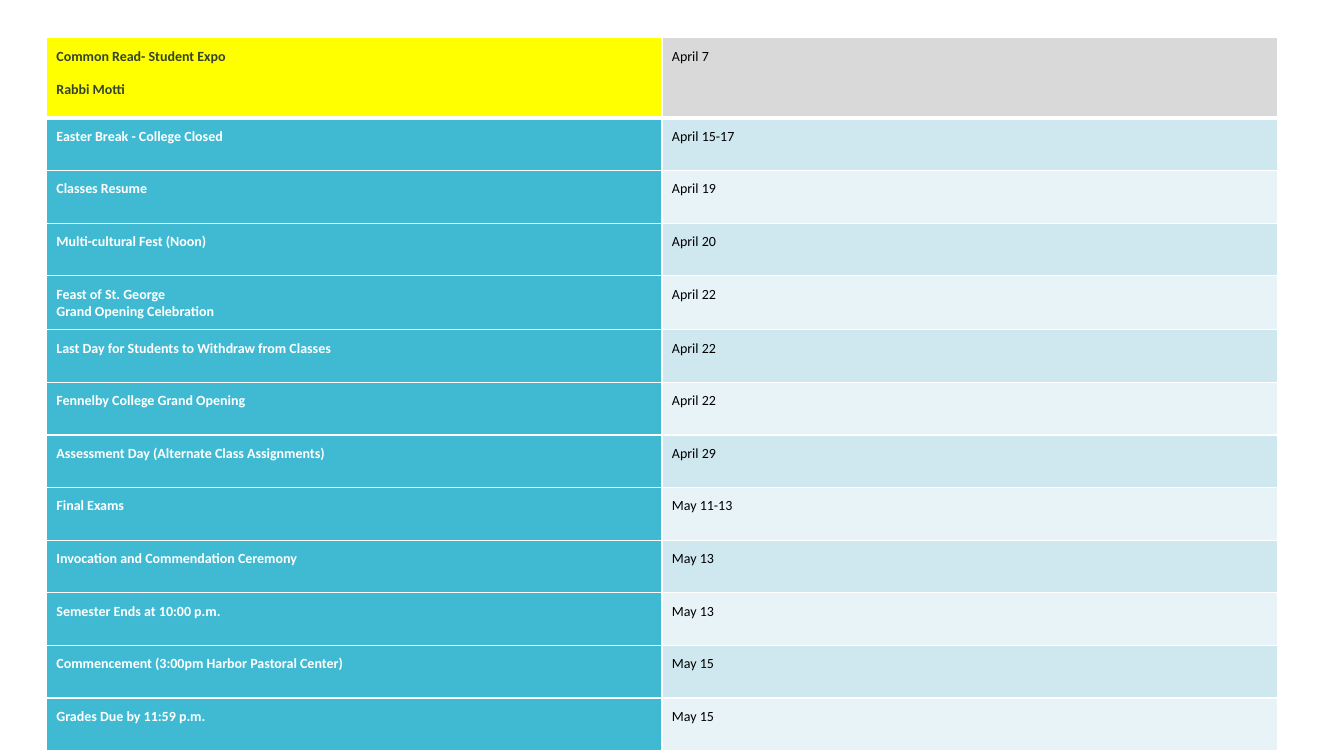
import dataclasses

import lxml.etree
import pptx
import pptx.dml.color
import pptx.oxml.ns
import pptx.table
import pptx.util


@dataclasses.dataclass(frozen=True)
class Theme:
    font: str = "Calibri"
    text_size: int = 10
    paragraph_gap: int = 12
    rule: int = 1
    header_rule: int = 3
    margin: float = 0.1
    white: str = "FFFFFF"
    black: str = "000000"
    olive: str = "344529"
    yellow: str = "FFFF00"
    gray: str = "D9D9D9"
    teal: str = "40BAD2"
    bands: tuple[str, str] = ("CFE7EE", "E8F3F7")


@dataclasses.dataclass(frozen=True)
class Event:
    titles: tuple[str, ...]
    date: str


@dataclasses.dataclass(frozen=True)
class CellStyle:
    fill: str
    color: str
    bold: bool
    gap: int = 0


THEME = Theme()
SLIDE_WIDTH = pptx.util.Inches(13.33)
SLIDE_HEIGHT = pptx.util.Inches(7.5)
LEFT_SHARE, TOP_SHARE = 3.45 / 100, 5 / 100
WIDTH_SHARE = 91.6 / 100
HEADER_SHARE, BODY_SHARE = 10.6 / 100, 83.5 / 100

EVENTS = [
    Event(("Common Read- Student Expo", "Rabbi Motti"), "April 7"),
    Event(("Easter Break - College Closed",), "April 15-17"),
    Event(("Classes Resume",), "April 19"),
    Event(("Multi-cultural Fest (Noon)",), "April 20"),
    Event(("Feast of St. George", "Grand Opening Celebration"), "April 22"),
    Event(("Last Day for Students to Withdraw from Classes",), "April 22"),
    Event(("Fennelby College Grand Opening",), "April 22"),
    Event(("Assessment Day (Alternate Class Assignments)",), "April 29"),
    Event(("Final Exams",), "May 11-13"),
    Event(("Invocation and Commendation Ceremony",), "May 13"),
    Event(("Semester Ends at 10:00 p.m.",), "May 13"),
    Event(("Commencement (3:00pm Harbor Pastoral Center)",), "May 15"),
    Event(("Grades Due by 11:59 p.m.",), "May 15"),
]


def apply_format(target: object, values: dict[str, object]) -> None:
    for name, value in values.items():
        setattr(target, name, value)


def draw_borders(cell: pptx.table._Cell, top: int, bottom: int) -> None:
    properties = cell._tc.get_or_add_tcPr()
    widths = {"L": THEME.rule, "R": THEME.rule, "T": top, "B": bottom}
    for side, width in widths.items():
        line = lxml.etree.SubElement(
            properties, pptx.oxml.ns.qn(f"a:ln{side}"), w=str(pptx.util.Pt(width))
        )
        fill = lxml.etree.SubElement(line, pptx.oxml.ns.qn("a:solidFill"))
        lxml.etree.SubElement(fill, pptx.oxml.ns.qn("a:srgbClr"), val=THEME.white)


def write_cell(cell: pptx.table._Cell, lines: tuple[str, ...], style: CellStyle) -> None:
    cell.fill.solid()
    cell.fill.fore_color.rgb = pptx.dml.color.RGBColor.from_string(style.fill)
    margin = pptx.util.Inches(THEME.margin)
    sides = ("left", "right", "top", "bottom")
    apply_format(cell, {f"margin_{side}": margin for side in sides})
    for index, line in enumerate(lines):
        frame = cell.text_frame
        paragraph = frame.add_paragraph() if index else frame.paragraphs[0]
        if index and style.gap:
            paragraph.space_before = pptx.util.Pt(style.gap)
        run = paragraph.add_run()
        run.text = line
        apply_format(run.font, {
            "name": THEME.font,
            "size": pptx.util.Pt(THEME.text_size),
            "bold": style.bold,
        })
        run.font.color.rgb = pptx.dml.color.RGBColor.from_string(style.color)


def row_styles(row: int) -> tuple[CellStyle, CellStyle]:
    if row == 0:
        return (
            CellStyle(THEME.yellow, THEME.olive, True, THEME.paragraph_gap),
            CellStyle(THEME.gray, THEME.black, False),
        )
    band = THEME.bands[(row - 1) % 2]
    return CellStyle(THEME.teal, THEME.white, True), CellStyle(band, THEME.black, False)


def draw_calendar(slide: pptx.slide.Slide, events: list[Event]) -> None:
    table = slide.shapes.add_table(
        len(events), 2,
        int(SLIDE_WIDTH * LEFT_SHARE), int(SLIDE_HEIGHT * TOP_SHARE),
        int(SLIDE_WIDTH * WIDTH_SHARE),
        int(SLIDE_HEIGHT * (HEADER_SHARE + BODY_SHARE)),
    ).table
    apply_format(table, {"first_row": False, "horz_banding": False})
    body_share = BODY_SHARE / (len(events) - 1)
    for row, event in enumerate(events):
        share = body_share if row else HEADER_SHARE
        table.rows[row].height = int(SLIDE_HEIGHT * share)
        top = THEME.header_rule if row == 1 else THEME.rule
        bottom = THEME.header_rule if row == 0 else THEME.rule
        contents = (event.titles, (event.date,))
        for column, (lines, style) in enumerate(zip(contents, row_styles(row))):
            cell = table.cell(row, column)
            draw_borders(cell, top, bottom)
            write_cell(cell, lines, style)


def main() -> None:
    presentation = pptx.Presentation()
    apply_format(presentation, {
        "slide_width": SLIDE_WIDTH,
        "slide_height": SLIDE_HEIGHT,
    })
    slide = presentation.slides.add_slide(presentation.slide_layouts[6])
    draw_calendar(slide, EVENTS)
    presentation.save("out.pptx")


if __name__ == "__main__":
    main()
